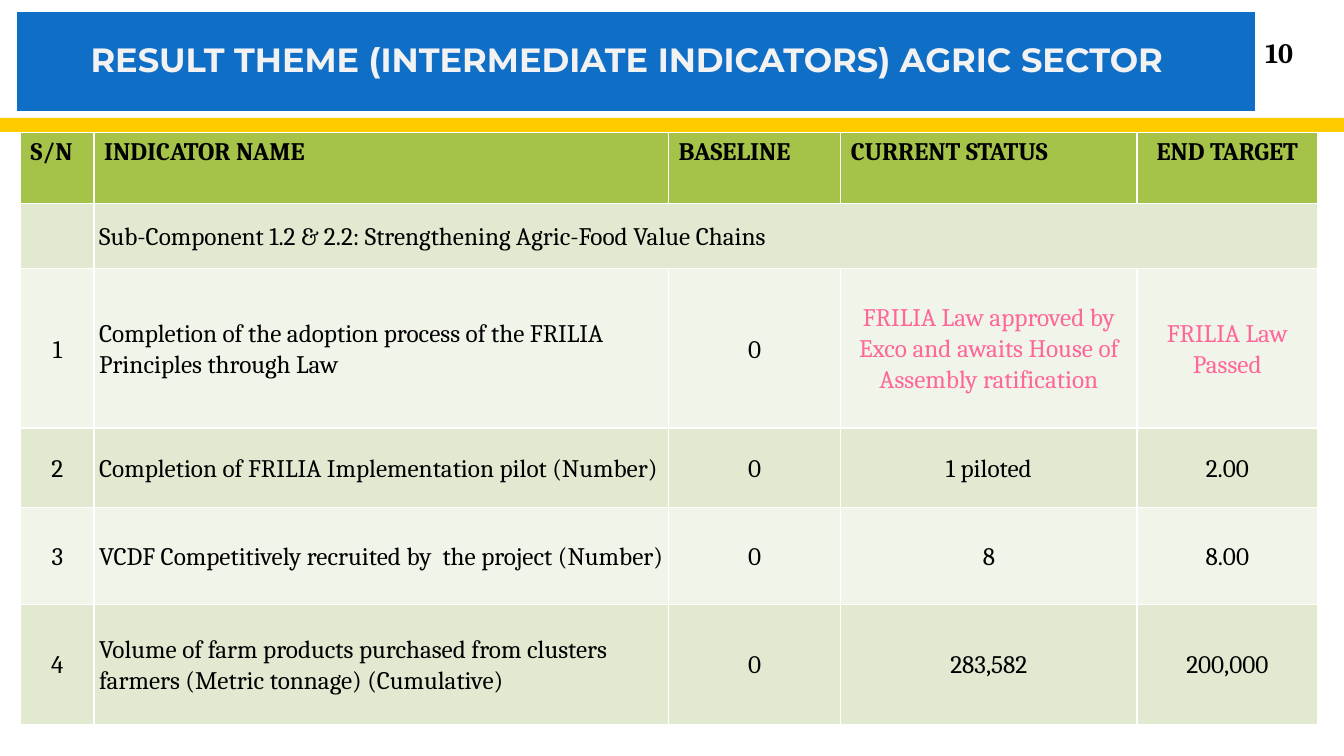
from pptx import Presentation
from pptx.dml.color import RGBColor
from pptx.enum.shapes import MSO_SHAPE as Shape
from pptx.enum.text import MSO_ANCHOR as Anchor, MSO_AUTO_SIZE as AutoSize, PP_ALIGN as Align
from pptx.util import Pt

WHITE = RGBColor(0xFF, 0xFF, 0xFF)
BLACK = RGBColor(0, 0, 0)
PALE = RGBColor(0xF2, 0xF2, 0xF2)
BLUE = RGBColor(0x0F, 0x6F, 0xC6)
YELLOW = RGBColor(0xFF, 0xCC, 0x00)
GREEN = RGBColor(0xA5, 0xC2, 0x49)
BANDS = [RGBColor(0xE1, 0xE9, 0xD0), RGBColor(0xF0, 0xF4, 0xE9)]
PINK = RGBColor(0xFF, 0x66, 0x99)


def write(frame, text, size=18, font="Cambria", color=BLACK, bold=False,
          align=Align.LEFT, spacing=1.0, after=0):
    line = frame.paragraphs[0]
    line.alignment, line.line_spacing, line.space_after = align, spacing, Pt(after)
    run = line.add_run()
    run.text = text
    run.font.size, run.font.name, run.font.bold = Pt(size), font, bold
    run.font.color.rgb = color


deck = Presentation()
deck.slide_width, deck.slide_height = Pt(960), Pt(540)
slide = deck.slides.add_slide(deck.slide_layouts[5])

# Yellow rule under the title
rule = slide.shapes.add_shape(Shape.RECTANGLE, 0, Pt(84.2), Pt(960), Pt(10))
rule.shadow.inherit = False
rule.fill.solid()
rule.fill.fore_color.rgb = YELLOW
rule.line.fill.background()

# Title banner
title = slide.shapes.title
title.left, title.top, title.width, title.height = Pt(11.5), Pt(8), Pt(885), Pt(72)
title.fill.solid()
title.fill.fore_color.rgb = BLUE
title.line.color.rgb = WHITE
title.line.width = Pt(0.75)
banner = title.text_frame
banner.word_wrap = True
banner.auto_size = AutoSize.NONE
banner.vertical_anchor = Anchor.MIDDLE
banner.margin_right = Pt(20)
write(banner, "RESULT THEME (INTERMEDIATE INDICATORS) AGRIC SECTOR", size=24,
      font="Montserrat", color=PALE, bold=True, align=Align.CENTER, spacing=0.9)

# Page number
page = slide.shapes.add_textbox(Pt(878.4), Pt(23), Pt(70.6), Pt(29)).text_frame
page.word_wrap = True
page.vertical_anchor = Anchor.MIDDLE
write(page, "10", size=20, bold=True, align=Align.CENTER)

# Indicator table
headings = ["S/N", "INDICATOR NAME", "BASELINE", "CURRENT STATUS", "END TARGET"]
indicators = [
    ["", "Sub-Component 1.2 & 2.2: Strengthening Agric-Food Value Chains", "", "", ""],
    ["1", "Completion of the adoption process of the FRILIA Principles through Law", "0",
     "FRILIA Law approved by Exco and awaits House of Assembly ratification",
     "FRILIA Law Passed"],
    ["2", "Completion of FRILIA Implementation pilot (Number)", "0", "1 piloted", "2.00"],
    ["3", "VCDF Competitively recruited by  the project (Number)", "0", "8", "8.00"],
    ["4", "Volume of farm products purchased from clusters farmers (Metric tonnage) (Cumulative)",
     "0", "283,582", "200,000"],
]
widths = [52.5, 410.3, 123, 211.7, 129]
heights = [50.4, 46.8, 113.8, 56.9, 69, 85.7]
table = slide.shapes.add_table(len(heights), len(widths), Pt(14.7), Pt(94.8),
                               Pt(sum(widths)), Pt(sum(heights))).table
for column, width in zip(table.columns, widths):
    column.width = Pt(width)
for row, height in zip(table.rows, heights):
    row.height = Pt(height)

# Header row
for c, heading in enumerate(headings):
    cell = table.cell(0, c)
    cell.fill.solid()
    cell.fill.fore_color.rgb = GREEN
    write(cell.text_frame, heading, bold=True,
          align=Align.CENTER if heading == "END TARGET" else Align.LEFT)

# Banded indicator rows
table.cell(1, 1).merge(table.cell(1, 4))
for r, indicator in enumerate(indicators, start=1):
    for c, entry in enumerate(indicator):
        cell = table.cell(r, c)
        cell.fill.solid()
        cell.fill.fore_color.rgb = BANDS[(r - 1) % 2]
        cell.vertical_anchor = Anchor.MIDDLE
        cell.margin_left = cell.margin_right = Pt([0.7, 3.6, 0.7, 0, 0.7][c])
        cell.margin_top = Pt(0 if c == 3 else 0.7)
        cell.margin_bottom = 0
        if entry:
            write(cell.text_frame, entry, spacing=1.07, after=8 if c < 2 else 0,
                  align=Align.LEFT if c == 1 else Align.CENTER,
                  color=PINK if c > 2 and entry.startswith("FRILIA") else BLACK)

deck.save("out.pptx")
